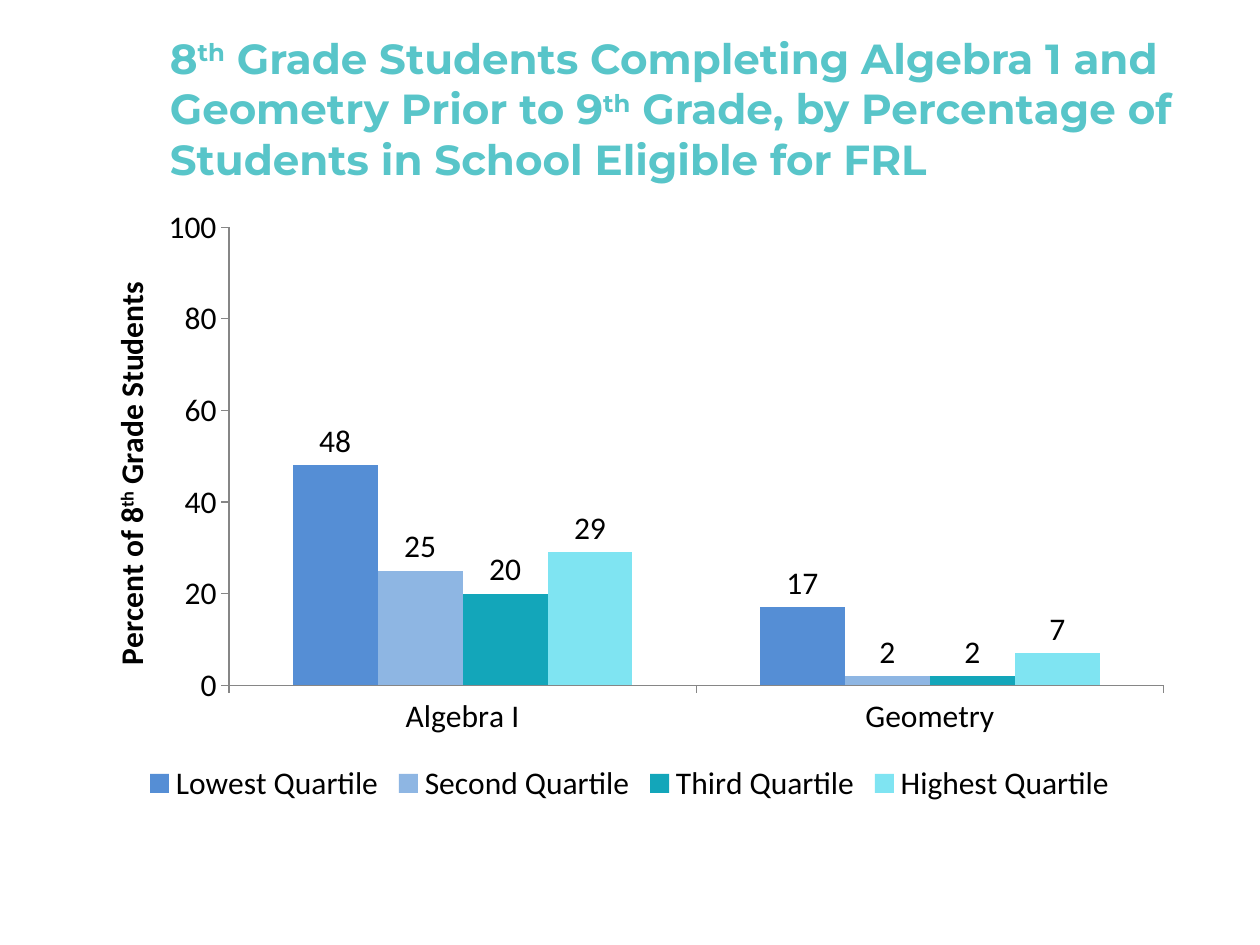
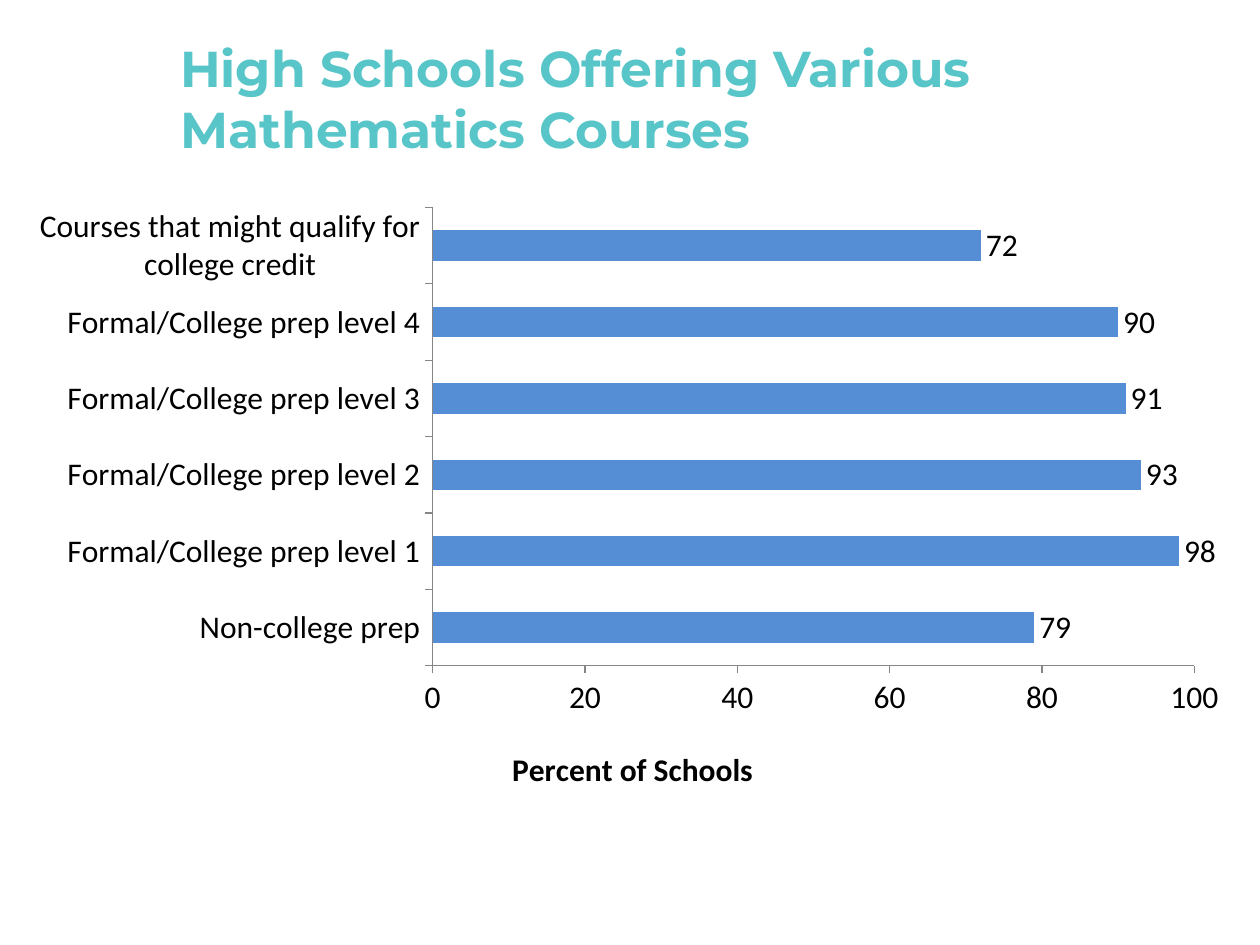
from dataclasses import dataclass

from lxml.etree import SubElement
from pptx import Presentation
from pptx.chart.data import CategoryChartData
from pptx.dml.color import RGBColor
from pptx.enum.chart import XL_CHART_TYPE, XL_LABEL_POSITION, XL_LEGEND_POSITION, XL_TICK_MARK
from pptx.enum.text import MSO_ANCHOR
from pptx.oxml.ns import qn
from pptx.util import Pt


@dataclass(frozen=True)
class Theme:
    title_font: str = "Montserrat"
    chart_font: str = "Calibri"
    title_color: str = "58C5C9"
    text_color: str = "000000"
    axis_color: str = "868686"
    series_colors: tuple = ("558ED5", "8EB6E3", "13A6BA", "7FE4F2")
    compact_title_size: float = 24
    title_size: float = 28.8
    chart_size: float = 18


def add_text(paragraph, pieces, *, font, size, color, bold=False):
    """Add the pieces as runs; every second piece is superscript."""
    for index, piece in enumerate(pieces):
        run = paragraph.add_run()
        run.text = piece
        run.font.name = font
        run.font.size = Pt(size)
        run.font.bold = bold
        run.font.color.rgb = RGBColor.from_string(color)
        if index % 2:
            run._r.get_or_add_rPr().set("baseline", "30000")


def set_layout(parent, position, *, after=None, inner=False):
    """Place a chart part by fractions of the chart: x, y and optionally w, h."""
    for old_layout in parent.findall(qn("c:layout")):
        parent.remove(old_layout)
    layout = SubElement(parent, qn("c:layout"))
    manual = SubElement(layout, qn("c:manualLayout"))
    settings = [("layoutTarget", "inner")] if inner else []
    settings += [("xMode", "edge"), ("yMode", "edge")]
    settings += zip(("x", "y", "w", "h"), position)
    for name, value in settings:
        SubElement(manual, qn(f"c:{name}")).set("val", str(value))
    if after is None:
        parent.insert(0, layout)
    else:
        after.addnext(layout)


class Deck:
    def __init__(self, theme):
        self.theme = theme
        self.presentation = Presentation()
        self.presentation.slide_width = Pt(720)
        self.presentation.slide_height = Pt(540)
        self.slide = None

    def new_slide(self):
        self.slide = self.presentation.slides.add_slide(self.presentation.slide_layouts[6])

    def add_title(self, pieces, left, top, width, size):
        box = self.slide.shapes.add_textbox(Pt(left), Pt(top), Pt(width), Pt(68.4))
        frame = box.text_frame
        frame.word_wrap = True
        frame.vertical_anchor = MSO_ANCHOR.MIDDLE
        add_text(frame.paragraphs[0], pieces, font=self.theme.title_font, size=size,
                 color=self.theme.title_color, bold=True)

    def add_bar_chart(self, chart_type, left, width, categories, series, plot_layout):
        data = CategoryChartData(number_format="0")
        data.categories = categories
        for name, values in series.items():
            data.add_series(name, values)
        chart = self.slide.shapes.add_chart(
            chart_type, Pt(left), Pt(111.6), Pt(width), Pt(350.6), data).chart
        chart.has_title = False
        chart.has_legend = len(series) > 1
        chart.font.name = self.theme.chart_font
        chart.font.size = Pt(self.theme.chart_size)
        chart.font.color.rgb = RGBColor.from_string(self.theme.text_color)
        if chart.has_legend:
            chart.legend.position = XL_LEGEND_POSITION.BOTTOM
            chart.legend.include_in_layout = False
        self.style_axes(chart)
        self.style_bars(chart.plots[0])
        set_layout(chart._chartSpace.chart.plotArea, plot_layout, inner=True)
        return chart

    def style_axes(self, chart):
        for axis in (chart.category_axis, chart.value_axis):
            axis.has_major_gridlines = False
            axis.major_tick_mark = XL_TICK_MARK.OUTSIDE
            axis.minor_tick_mark = XL_TICK_MARK.NONE
            axis.format.line.color.rgb = RGBColor.from_string(self.theme.axis_color)
            axis.format.line.width = Pt(0.75)
        chart.value_axis.minimum_scale = 0
        chart.value_axis.maximum_scale = 100
        chart.value_axis.major_unit = 20

    def style_bars(self, plot):
        plot.gap_width = 150
        plot.overlap = 0
        plot.vary_by_categories = False
        for series, color in zip(plot.series, self.theme.series_colors):
            series.invert_if_negative = False
            series.format.fill.solid()
            series.format.fill.fore_color.rgb = RGBColor.from_string(color)
            series.data_labels.show_value = True
            series.data_labels.position = XL_LABEL_POSITION.OUTSIDE_END

    def add_value_title(self, chart, pieces, position, rotation=0):
        title = chart.value_axis.axis_title
        frame = title.text_frame
        add_text(frame.paragraphs[0], pieces, font=self.theme.chart_font,
                 size=self.theme.chart_size, color=self.theme.text_color, bold=True)
        body = frame._txBody.find(qn("a:bodyPr"))
        body.set("rot", str(rotation * 60000))
        body.set("vert", "horz")
        set_layout(title._element, position, after=title._element.find(qn("c:tx")))


def add_completion_slide(deck):
    deck.new_slide()
    chart = deck.add_bar_chart(
        XL_CHART_TYPE.COLUMN_CLUSTERED, 41.8, 635.8,
        ["Algebra I", "Geometry"],
        {
            "Lowest Quartile": (48, 17),
            "Second Quartile": (25, 2),
            "Third Quartile": (20, 2),
            "Highest Quartile": (29, 7),
        },
        (0.14, 0.052, 0.84, 0.747))
    deck.add_value_title(chart, ["Percent of 8", "th", " Grade Students"],
                         (0.03, 0.135), rotation=-90)
    deck.add_title(
        ["8", "th", " Grade Students Completing Algebra 1 and Geometry Prior to 9", "th",
         " Grade, by Percentage of Students in School Eligible for FRL"],
        90, 27.4, 620.6, deck.theme.compact_title_size)


def add_courses_slide(deck):
    deck.new_slide()
    levels = [f"Formal/College prep level {level}" for level in range(1, 5)]
    chart = deck.add_bar_chart(
        XL_CHART_TYPE.BAR_CLUSTERED, 8.6, 702,
        ["Non-college prep", *levels, "Courses that might qualify for college credit"],
        {"Series 1": (79, 98, 93, 91, 90, 72)},
        (0.34, 0.02, 0.62, 0.747))
    deck.add_value_title(chart, ["Percent of Schools"], (0.4, 0.89))
    deck.add_title(["High Schools Offering Various Mathematics Courses"],
                   95.8, 21.6, 588.2, deck.theme.title_size)


def main():
    deck = Deck(Theme())
    add_completion_slide(deck)
    add_courses_slide(deck)
    deck.presentation.save("out.pptx")


if __name__ == "__main__":
    main()
